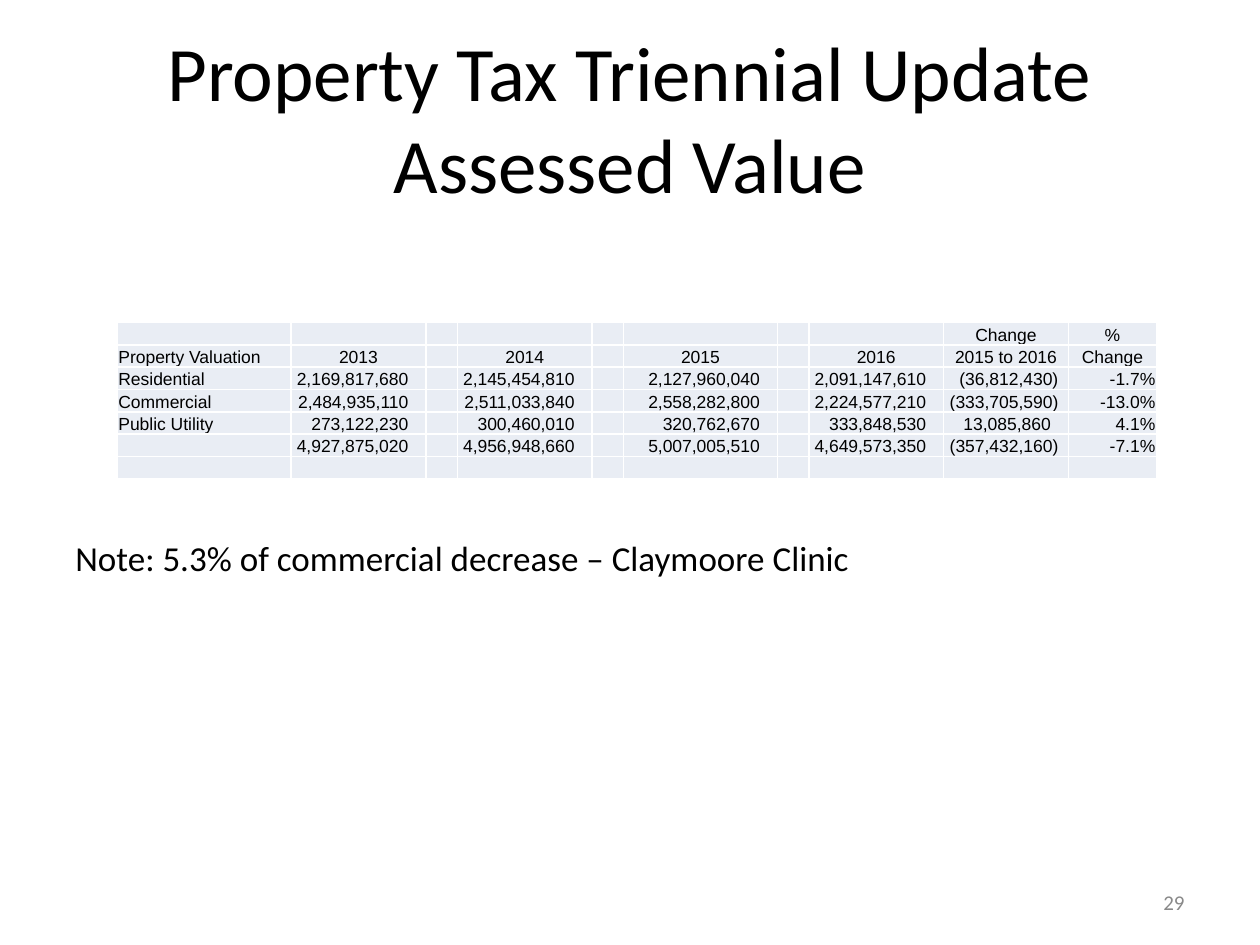
from lxml.etree import SubElement
from pptx import Presentation
from pptx.dml.color import RGBColor
from pptx.enum.text import MSO_ANCHOR, MSO_AUTO_SIZE, PP_ALIGN
from pptx.oxml import parse_xml
from pptx.oxml.ns import nsdecls, qn
from pptx.util import Inches, Pt

LEFT, MID, RIGHT = PP_ALIGN.LEFT, PP_ALIGN.CENTER, PP_ALIGN.RIGHT


def paint(color, hue):
    color.rgb = RGBColor.from_string(hue)


def write(para, text, size, face, hue="000000", align=LEFT):
    """Add one run to a paragraph, and align the paragraph."""
    para.alignment = align
    run = para.add_run()
    run.text = text
    run.font.size, run.font.name = Pt(size), face
    paint(run.font.color, hue)


deck = Presentation()
deck.slide_width, deck.slide_height = Inches(10), Inches(7.5)
wide, high = deck.slide_width, deck.slide_height
slide = deck.slides.add_slide(deck.slide_layouts[5])
shapes = slide.shapes

# Title
title = shapes.title
title.left, title.top = int(wide * 0.05), int(high * 0.04)
title.width, title.height = int(wide * 0.9), Inches(1.25)
frame = title.text_frame
frame.word_wrap, frame.auto_size = True, MSO_AUTO_SIZE.NONE
frame.vertical_anchor = MSO_ANCHOR.MIDDLE
head = frame.paragraphs[0]
write(head, "Property Tax Triennial Update", 44, "Calibri", align=MID)
head.add_line_break()
write(head, "Assessed Value", 44, "Calibri", align=MID)

# Note and page number: text, left, top, width, height, size, colour, align
notes = [
    ("Note: 5.3% of commercial decrease – Claymoore Clinic",
     0.05, 0.56, 0.9, 0.06, 20, "000000", LEFT),
    ("29", 0.72, 0.93, 0.23, 0.05, 12, "898989", RIGHT),
]
for text, x, y, w, h, size, hue, align in notes:
    box = shapes.add_textbox(int(wide * x), int(high * y),
                             int(wide * w), int(high * h))
    box.text_frame.word_wrap = True
    box.text_frame.vertical_anchor = MSO_ANCHOR.MIDDLE
    write(box.text_frame.paragraphs[0], text, size, "Calibri", hue, align)

# Valuation table: narrow blank columns part the years
widths = [1.38, 1.07, 0.25, 1.07, 0.25, 1.22, 0.25, 1.07, 0.99, 0.7]
places = [0, 1, 3, 5, 7, 8, 9]
rows = [
    ["", "", "", "", "", "Change", "%"],
    ["Property Valuation", "2013", "2014", "2015", "2016",
     "2015 to 2016", "Change"],
    ["Residential", "2,169,817,680", "2,145,454,810", "2,127,960,040",
     "2,091,147,610", "(36,812,430)", "-1.7%"],
    ["Commercial", "2,484,935,110", "2,511,033,840", "2,558,282,800",
     "2,224,577,210", "(333,705,590)", "-13.0%"],
    ["Public Utility", "273,122,230", "300,460,010", "320,762,670",
     "333,848,530", "13,085,860", "4.1%"],
    ["", "4,927,875,020", "4,956,948,660", "5,007,005,510",
     "4,649,573,350", "(357,432,160)", "-7.1%"],
    [""] * 7,
]
table = shapes.add_table(len(rows), len(widths), Inches(0.93), Inches(2.56),
                         Inches(sum(widths)), Inches(1.24)).table
table.first_row = table.horz_banding = False
for col, width in zip(table.columns, widths):
    col.width = Inches(width)

for r, row in enumerate(rows):
    texts = dict(zip(places, row))
    for c in range(len(widths)):
        cell, text = table.cell(r, c), texts.get(c, "")
        cell.vertical_anchor = MSO_ANCHOR.BOTTOM
        cell.margin_left = cell.margin_right = cell.margin_top = Inches(0.01)
        cell.margin_bottom = 0
        para = cell.text_frame.paragraphs[0]
        if text:
            align = LEFT if c == 0 else MID if r < 2 else RIGHT
            write(para, text, 10, "Arial", align=align)
            if align == RIGHT and c < 9:
                cell.margin_right = Inches(0.08 if ")" in text else 0.14)
        else:
            SubElement(para._p, qn("a:endParaRPr"), sz="1000")
        props = cell._tc.get_or_add_tcPr()
        for side in ("lnL", "lnR", "lnT", "lnB"):
            props.append(parse_xml(
                f'<a:{side} {nsdecls("a")} w="12700"><a:solidFill>'
                f'<a:srgbClr val="FFFFFF"/></a:solidFill></a:{side}>'))
        cell.fill.solid()
        paint(cell.fill.fore_color, "E9EDF4")

deck.save("out.pptx")
